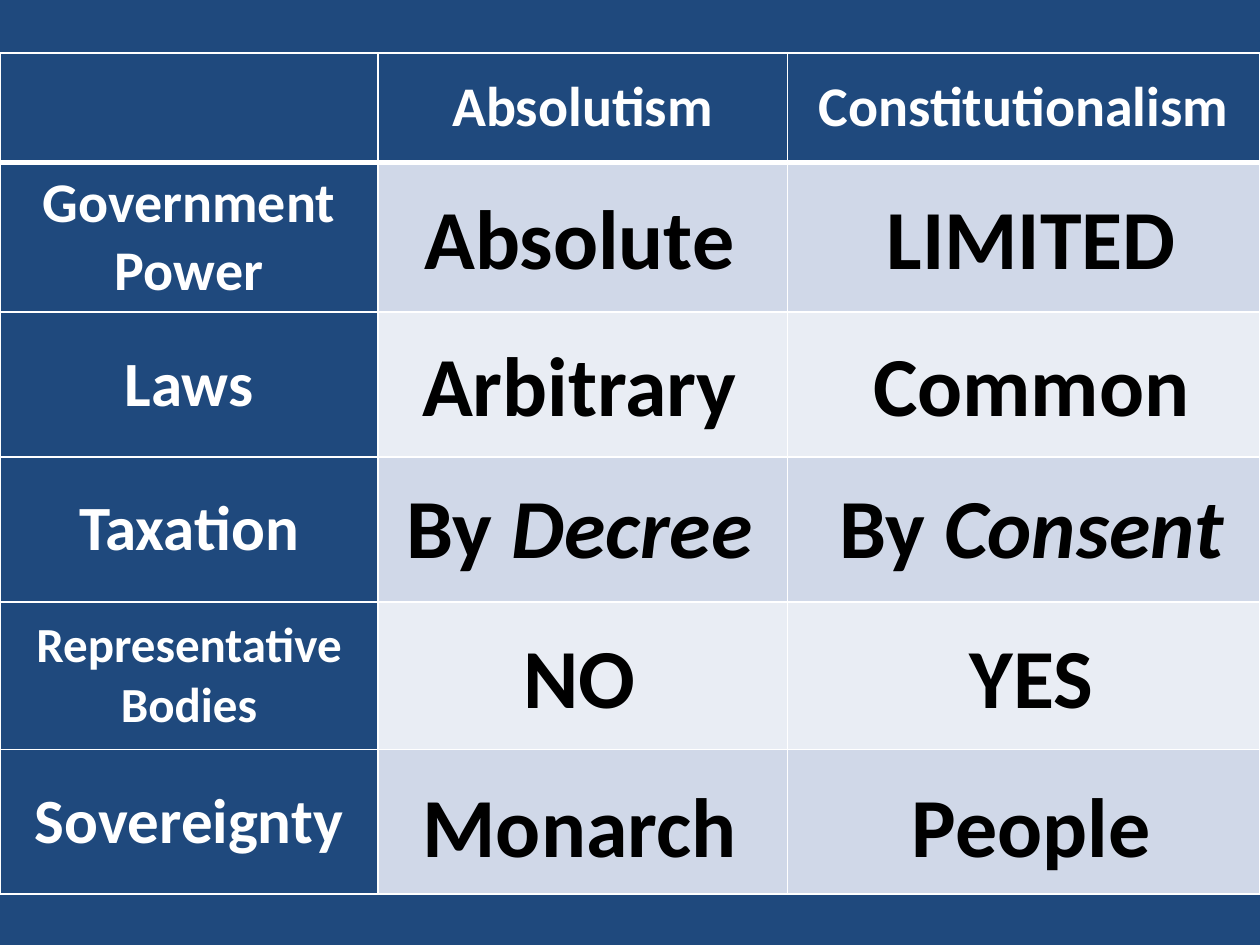
from dataclasses import dataclass

import lxml.etree
import pptx
import pptx.dml.color
import pptx.enum.text
import pptx.oxml.ns
import pptx.util

Inches = pptx.util.Inches
Pt = pptx.util.Pt
CENTER = pptx.enum.text.PP_ALIGN.CENTER
MIDDLE = pptx.enum.text.MSO_ANCHOR.MIDDLE
qn = pptx.oxml.ns.qn

NAVY, WHITE, BLACK = "1F497D", "FFFFFF", "000000"
BANDS = ("D0D8E8", "E9EDF4")
COL_WIDTHS = (3, 3.25, 3.75)
HEADER_HEIGHT = 0.87
HEADERS = ("", "Absolutism", "Constitutionalism")
ANSWER_BOXES = ((3, 3.2), (6.42, 3.53))
ANSWER_HEIGHT = 0.91


@dataclass
class Topic:
    name: str
    size: int
    height: float
    answer_top: float
    answers: tuple[str, str]
    lead: str = ""


TOPICS = [
    Topic("Government Power", 32, 1.17, 1.42, ("Absolute", "LIMITED")),
    Topic("Laws", 36, 1.15, 2.59, ("Arbitrary", "Common")),
    Topic("Taxation", 36, 1.15, 3.72, ("Decree", "Consent"), "By "),
    Topic("Representative Bodies", 28, 1.17, 4.91, ("NO", "YES")),
    Topic("Sovereignty", 36, 1.15, 6.09, ("Monarch", "People")),
]


def rgb(color: str) -> pptx.dml.color.RGBColor:
    return pptx.dml.color.RGBColor.from_string(color)


def add_run(p, text: str, size: int, color: str, italic: bool = False) -> None:
    r = p.add_run()
    r.text = text
    font = {"name": "Calibri", "size": Pt(size), "bold": True, "italic": italic}
    for key, value in font.items():
        setattr(r.font, key, value)
    r.font.color.rgb = rgb(color)


def set_borders(cell, top: float, bottom: float) -> None:
    tcPr = cell._tc.get_or_add_tcPr()
    for side, width in {"lnL": 1, "lnR": 1, "lnT": top, "lnB": bottom}.items():
        ln = lxml.etree.SubElement(tcPr, qn(f"a:{side}"), w=str(Pt(width)))
        fill = lxml.etree.SubElement(ln, qn("a:solidFill"))
        lxml.etree.SubElement(fill, qn("a:srgbClr"), val=WHITE)


def set_label(cell, text: str, size: int) -> None:
    cell.vertical_anchor = MIDDLE
    p = cell.text_frame.paragraphs[0]
    p.alignment = CENTER
    if text:
        add_run(p, text, size, WHITE)


def add_grid(s) -> None:
    heights = [HEADER_HEIGHT] + [topic.height for topic in TOPICS]
    tbl = s.shapes.add_table(
        len(heights), len(COL_WIDTHS), Inches(0), Inches(0.42),
        Inches(sum(COL_WIDTHS)), Inches(sum(heights)),
    ).table
    for key in ("first_row", "horz_banding"):
        setattr(tbl, key, False)
    for col, width in zip(tbl.columns, COL_WIDTHS):
        col.width = Inches(width)
    for i, height in enumerate(heights):
        tbl.rows[i].height = Inches(height)
        for j in range(len(COL_WIDTHS)):
            cell = tbl.cell(i, j)
            set_borders(cell, 3 if i == 1 else 1, 3 if i == 0 else 1)
            if i and j:
                cell.fill.solid()
                cell.fill.fore_color.rgb = rgb(BANDS[(i - 1) % 2])
            else:
                cell.fill.background()
    for j, header in enumerate(HEADERS):
        set_label(tbl.cell(0, j), header, 32)
    for i, topic in enumerate(TOPICS, 1):
        set_label(tbl.cell(i, 0), topic.name, topic.size)


def add_answers(s, topic: Topic) -> None:
    for (left, width), answer in zip(ANSWER_BOXES, topic.answers):
        sp = s.shapes.add_textbox(
            Inches(left), Inches(topic.answer_top),
            Inches(width), Inches(ANSWER_HEIGHT),
        )
        tf = sp.text_frame
        tf.word_wrap = True
        tf.auto_size = pptx.enum.text.MSO_AUTO_SIZE.SHAPE_TO_FIT_TEXT
        p = tf.paragraphs[0]
        p.alignment = CENTER
        if topic.lead:
            add_run(p, topic.lead, 48, BLACK)
        add_run(p, answer, 48, BLACK, italic=bool(topic.lead))


def main() -> None:
    prs = pptx.Presentation()
    prs.slide_width, prs.slide_height = Inches(10), Inches(7.5)
    s = prs.slides.add_slide(prs.slide_layouts[6])
    s.background.fill.solid()
    s.background.fill.fore_color.rgb = rgb(NAVY)
    add_grid(s)
    for topic in TOPICS:
        add_answers(s, topic)
    prs.save("out.pptx")


if __name__ == "__main__":
    main()
